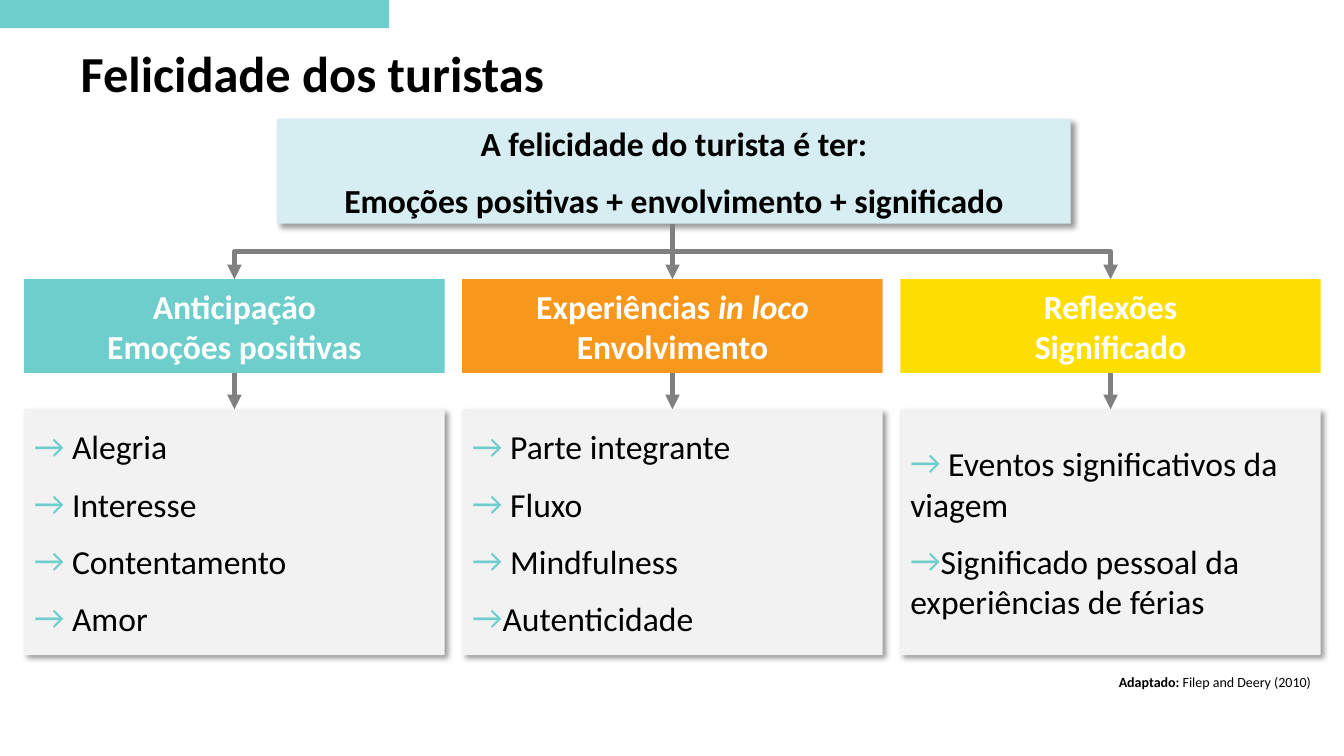
from lxml.etree import SubElement
from pptx import Presentation
from pptx.dml.color import RGBColor
from pptx.enum.shapes import MSO_CONNECTOR, MSO_SHAPE
from pptx.enum.text import MSO_ANCHOR, MSO_AUTO_SIZE, PP_ALIGN
from pptx.oxml.ns import qn
from pptx.util import Inches, Pt

TEAL = RGBColor(0x6E, 0xCE, 0xCB)
ORANGE = RGBColor(0xF7, 0x98, 0x1D)
YELLOW = RGBColor(0xFD, 0xDE, 0x00)
PALE_BLUE = RGBColor(0xD6, 0xED, 0xF2)
PALE_GREY = RGBColor(0xF2, 0xF2, 0xF2)
GREY = RGBColor(0x80, 0x80, 0x80)
BLACK = RGBColor(0, 0, 0)
WHITE = RGBColor(0xFF, 0xFF, 0xFF)

# Content: a paragraph is a list of (text, extra format) runs
TITLE = "Felicidade dos turistas"
DEFINITION = [
    [("A felicidade do turista é ter:", {})],
    [("Emoções positivas + envolvimento + significado", {})],
]
STAGES = [
    (TEAL,
     [[("Anticipação", {})], [("Emoções positivas", {})]],
     [" Alegria", " Interesse", " Contentamento", " Amor"]),
    (ORANGE,
     [[("Experiências ", {}), ("in loco", {"italic": True})], [("Envolvimento", {})]],
     [" Parte integrante", " Fluxo", " Mindfulness", "Autenticidade"]),
    (YELLOW,
     [[("Reflexões", {})], [("Significado", {})]],
     [" Eventos significativos da viagem",
      "Significado pessoal da experiências de férias"]),
]
CREDIT = [[("Adaptado: ", {"bold": True}), ("Filep and Deery (2010)", {})]]

# Formats
BODY = {"name": "Calibri", "size": Pt(24), "bold": False}
STRONG = {**BODY, "bold": True}
HEADING = {**STRONG, "size": Pt(36)}
SMALL = {**BODY, "size": Pt(10)}

# Layout in inches
COLUMN_LEFT, LAST_LEFT, COLUMN_WIDTH = 0.24, 8.93, 4.17
PITCH = (LAST_LEFT - COLUMN_LEFT) / (len(STAGES) - 1)
DEFINITION_TOP, DEFINITION_HEIGHT = 1.18, 1.04
HEAD_TOP, HEAD_HEIGHT = 2.77, 0.93
LIST_TOP, LIST_HEIGHT = 4.06, 2.44
DEFINITION_BOTTOM = DEFINITION_TOP + DEFINITION_HEIGHT
HEAD_BOTTOM = HEAD_TOP + HEAD_HEIGHT

prs = Presentation()
prs.slide_width, prs.slide_height = Inches(13.33), Inches(7.5)
slide = prs.slides.add_slide(prs.slide_layouts[5])


def add_bullet(paragraph):
    props = paragraph._p.get_or_add_pPr()
    props.set("marL", "0")
    props.set("indent", "0")
    color = SubElement(props, qn("a:buClr"))
    SubElement(color, qn("a:srgbClr"), val=str(TEAL))
    SubElement(props, qn("a:buFont"), typeface="Calibri")
    SubElement(props, qn("a:buChar"), char="→")


def write(frame, paragraphs, style, color, align, after=0, bullets=False):
    frame.word_wrap = True
    for i, runs in enumerate(paragraphs):
        paragraph = frame.add_paragraph() if i else frame.paragraphs[0]
        if bullets:
            add_bullet(paragraph)
        paragraph.alignment = align
        paragraph.space_after = Pt(after)
        for text, extra in runs:
            run = paragraph.add_run()
            run.text = text
            for key, value in {**style, **extra}.items():
                setattr(run.font, key, value)
            run.font.color.rgb = color


def add_box(left, top, width, height, fill, shadow=False):
    box = slide.shapes.add_shape(
        MSO_SHAPE.RECTANGLE, *map(Inches, (left, top, width, height)))
    box.fill.solid()
    box.fill.fore_color.rgb = fill
    box.line.fill.background()
    box.shadow.inherit = False
    if shadow:
        effects = box._element.spPr.find(qn("a:effectLst"))
        outer = SubElement(effects, qn("a:outerShdw"), blurRad=str(Pt(4)),
                           dist=str(Pt(3)), dir="2700000", algn="tl", rotWithShape="0")
        black = SubElement(outer, qn("a:srgbClr"), val=str(BLACK))
        SubElement(black, qn("a:alpha"), val="40000")
    box.text_frame.vertical_anchor = MSO_ANCHOR.MIDDLE
    return box


def add_arrow(x1, y1, x2, y2):
    """Straight arrow down, or an elbow that leaves and arrives vertically."""
    kind, rotation = MSO_CONNECTOR.STRAIGHT, 0
    if abs(x2 - x1) > 0.01:
        # An elbow runs sideways first, so it is laid out on its side and turned
        kind, rotation = MSO_CONNECTOR.ELBOW, 90 if x2 < x1 else 270
        center_x, center_y = (x1 + x2) / 2, (y1 + y2) / 2
        half_x, half_y = (y2 - y1) / 2, abs(x2 - x1) / 2
        if x2 > x1:
            half_x = -half_x
        x1, x2 = center_x - half_x, center_x + half_x
        y1, y2 = center_y - half_y, center_y + half_y
    arrow = slide.shapes.add_connector(kind, *map(Inches, (x1, y1, x2, y2)))
    arrow.line.color.rgb = GREY
    arrow.line.width = Pt(3.5)
    SubElement(arrow.line._get_or_add_ln(), qn("a:tailEnd"), type="triangle")
    props = arrow._element.spPr
    SubElement(props, qn("a:effectLst"))
    if rotation:
        props.find(qn("a:xfrm")).set("rot", str(rotation * 60000))


# Top band and title
add_box(0, 0, 3.86, 0.28, TEAL)
title = slide.shapes.title
title.left, title.top, title.width, title.height = map(Inches, (0.7, 0.38, 9.9, 0.76))
title.text_frame.vertical_anchor = MSO_ANCHOR.MIDDLE
write(title.text_frame, [[(TITLE, {})]], HEADING, BLACK, PP_ALIGN.LEFT)
title.text_frame.paragraphs[0].line_spacing = 0.9

# Definition
definition = add_box(2.75, DEFINITION_TOP, 7.87, DEFINITION_HEIGHT, PALE_BLUE, shadow=True)
write(definition.text_frame, DEFINITION, STRONG, BLACK, PP_ALIGN.CENTER, after=12)

# Stages: heading and list
centers = []
for column, (fill, heading, items) in enumerate(STAGES):
    left = COLUMN_LEFT + column * PITCH
    centers.append(left + COLUMN_WIDTH / 2)
    head = add_box(left, HEAD_TOP, COLUMN_WIDTH, HEAD_HEIGHT, fill)
    write(head.text_frame, heading, STRONG, WHITE, PP_ALIGN.CENTER)
    details = add_box(left, LIST_TOP, COLUMN_WIDTH, LIST_HEIGHT, PALE_GREY, shadow=True)
    write(details.text_frame, [[(item, {})] for item in items], BODY, BLACK,
          PP_ALIGN.LEFT, after=12, bullets=True)

# Arrows from the definition to each heading, and on to its list
middle = centers[1]
for center in centers:
    add_arrow(middle, DEFINITION_BOTTOM, center, HEAD_TOP)
    add_arrow(center, HEAD_BOTTOM, center, LIST_TOP)

# Credit
credit = slide.shapes.add_textbox(*map(Inches, (10.52, 6.63, 2.58, 0.27)))
credit.text_frame.auto_size = MSO_AUTO_SIZE.SHAPE_TO_FIT_TEXT
write(credit.text_frame, CREDIT, SMALL, BLACK, PP_ALIGN.RIGHT)

prs.save("out.pptx")
